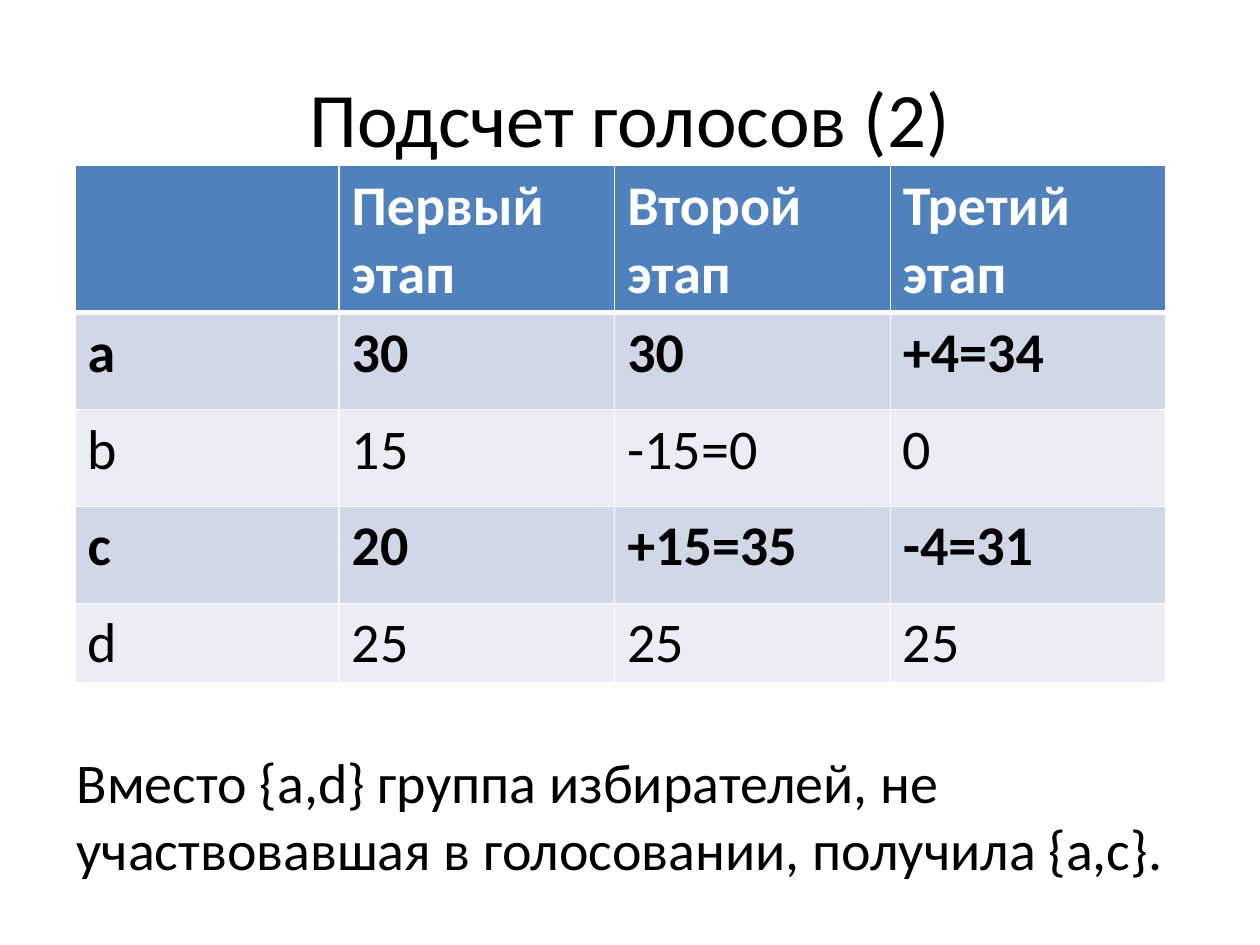
import pptx
import pptx.dml.color
import pptx.enum.text
import pptx.oxml.ns
import pptx.util
from lxml import etree

Pt = pptx.util.Pt
COLORS = {"header": "4F81BD", "odd": "D0D8E8", "even": "E9EDF4",
          "white": "FFFFFF", "black": "000000"}


def write(frame, text, size=32, color="black", bold=False):
    run = frame.paragraphs[0].add_run()
    run.text = text
    for attribute, value in {"name": "Calibri", "size": Pt(size), "bold": bold}.items():
        setattr(run.font, attribute, value)
    run.font.color.rgb = pptx.dml.color.RGBColor.from_string(COLORS[color])


def add_borders(cell, bottom_width):
    """Give the cell white edges; call before filling, as the schema puts lines first."""
    properties = cell._tc.get_or_add_tcPr()
    for edge, width in {"lnL": 1, "lnR": 1, "lnT": 1, "lnB": bottom_width}.items():
        line = etree.SubElement(properties, pptx.oxml.ns.qn(f"a:{edge}"), w=str(Pt(width)))
        fill = etree.SubElement(line, pptx.oxml.ns.qn("a:solidFill"))
        etree.SubElement(fill, pptx.oxml.ns.qn("a:srgbClr"), val=COLORS["white"])


deck = pptx.Presentation()
deck.slide_width, deck.slide_height = Pt(720), Pt(540)
slide = deck.slides.add_slide(deck.slide_layouts[6])

title = slide.shapes.add_textbox(Pt(36), Pt(21.6), Pt(648), Pt(90)).text_frame
title.word_wrap = True
title.vertical_anchor = pptx.enum.text.MSO_ANCHOR.MIDDLE
write(title, "Подсчет голосов (2)", size=44)
title.paragraphs[0].alignment = pptx.enum.text.PP_ALIGN.CENTER

votes = [
    ["", "Первый этап", "Второй этап", "Третий этап"],
    ["a", "30", "30", "+4=34"],
    ["b", "15", "-15=0", "0"],
    ["c", "20", "+15=35", "-4=31"],
    ["d", "25", "25", "25"],
]
column_widths = [151, 157.5, 157.5, 157.5]
row_heights = [71.3, 55.4, 55.4, 55.4, 23.8]
vote_table = slide.shapes.add_table(
    len(votes), len(column_widths), Pt(42.8), Pt(94.5),
    Pt(sum(column_widths)), Pt(sum(row_heights))).table
for column, width in zip(vote_table.columns, column_widths):
    column.width = Pt(width)
for row, height in zip(vote_table.rows, row_heights):
    row.height = Pt(height)

for row_index, row_texts in enumerate(votes):
    is_header = row_index == 0
    is_odd = row_index % 2 == 1
    band = "header" if is_header else "odd" if is_odd else "even"
    for column_index, text in enumerate(row_texts):
        cell = vote_table.cell(row_index, column_index)
        add_borders(cell, bottom_width=3 if is_header else 1)
        cell.fill.solid()
        cell.fill.fore_color.rgb = pptx.dml.color.RGBColor.from_string(COLORS[band])
        if text:
            write(cell.text_frame, text, color="white" if is_header else "black",
                  bold=is_header or is_odd)

conclusion = slide.shapes.add_textbox(Pt(36.7), Pt(423.4), Pt(641), Pt(85)).text_frame
conclusion.word_wrap = True
conclusion.auto_size = pptx.enum.text.MSO_AUTO_SIZE.SHAPE_TO_FIT_TEXT
write(conclusion, "Вместо {a,d} группа избирателей, не участвовавшая в голосовании, получила {a,c}.")

deck.save("out.pptx")
